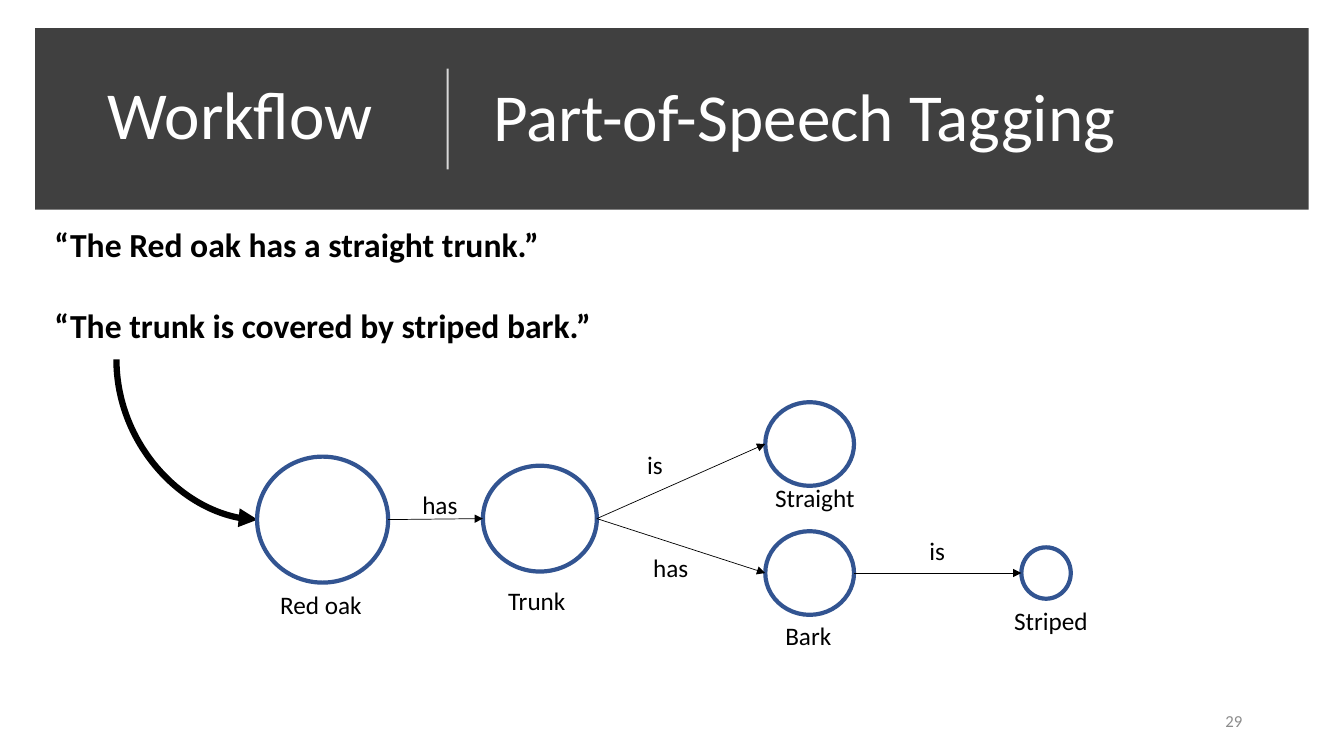
import pptx
import pptx.dml.color
import pptx.enum.shapes
import pptx.enum.text
import pptx.oxml
import pptx.oxml.ns
import pptx.util
from pptx.util import Inches

# Content
TITLE = "Part-of-Speech Tagging"
SECTION = "Workflow"
PAGE = "29"
SENTENCES = ["“The Red oak has a straight trunk.”",
             "“The trunk is covered by striped bark.”"]

# name: (circle left, top, width, height), (label left, top, width)
NODES = {
    "Red oak": ((2.55, 4.53, 1.3, 1.25), (2.68, 5.8, 1.02)),
    "Trunk": ((4.79, 4.62, 1.13, 1.05), (4.94, 5.76, 0.78)),
    "Straight": ((7.59, 3.99, 0.88, 0.83), (7.59, 4.74, 1)),
    "Bark": ((7.59, 5.27, 0.88, 0.83), (7.69, 6.11, 0.66)),
    "Striped": ((10.13, 5.43, 0.49, 0.51), (9.96, 5.96, 0.94)),
}
# from, to, relation, label left, label top
RELATIONS = [
    ("Red oak", "Trunk", "has", 4.09, 4.81),
    ("Trunk", "Straight", "is", 6.32, 4.41),
    ("Trunk", "Bark", "has", 6.38, 5.43),
    ("Bark", "Striped", "is", 9.12, 5.26),
]
COLORS = {"banner": "404040", "white": "FFFFFF", "black": "000000",
          "page": "8C8C8C", "circle": "325491"}
FONT = "Calibri"
LABEL_HEIGHT = 0.4
RELATION_WIDTH = 0.83

SHAPE = pptx.enum.shapes.MSO_SHAPE
CONNECTOR = pptx.enum.shapes.MSO_CONNECTOR
ALIGN = pptx.enum.text.PP_ALIGN
ANCHOR = pptx.enum.text.MSO_ANCHOR

deck = pptx.Presentation()
deck.slide_width, deck.slide_height = Inches(13.33), Inches(7.5)
slide = deck.slides.add_slide(deck.slide_layouts[5])


def rgb(name):
    return pptx.dml.color.RGBColor.from_string(COLORS[name])


def write(box, lines, size=18, color="black", bold=False, align=ALIGN.LEFT,
          anchor=ANCHOR.TOP, wrap=True, spacing=None, gap=0):
    frame = box.text_frame
    frame.word_wrap = wrap
    frame.auto_size = pptx.enum.text.MSO_AUTO_SIZE.NONE
    frame.vertical_anchor = anchor
    for index, line in enumerate(lines):
        paragraph = frame.add_paragraph() if index else frame.paragraphs[0]
        paragraph.text = line
        paragraph.alignment = align
        paragraph.line_spacing = spacing
        paragraph.space_before = pptx.util.Pt(gap if index else 0)
        font = paragraph.font
        font.name, font.size, font.bold = FONT, pptx.util.Pt(size), bold
        font.color.rgb = rgb(color)


def add_text(area, lines, **style):
    write(slide.shapes.add_textbox(*map(Inches, area)), lines, **style)


def add_shape(kind, area):
    shape = slide.shapes.add_shape(kind, *map(Inches, area))
    shape.shadow.inherit = False
    return shape


def add_line(kind, start, end, color, width, arrow=True):
    line = slide.shapes.add_connector(kind, *map(Inches, start + end))
    line.line.color.rgb = rgb(color)
    line.line.width = pptx.util.Pt(width)
    if arrow:
        tail = pptx.oxml.ns.qn("a:tailEnd")
        line.line._get_or_add_ln().makeelement(tail)
        head = pptx.oxml.parse_xml(
            f'<a:tailEnd {pptx.oxml.ns.nsdecls("a")} type="triangle"/>')
        line.line._get_or_add_ln().append(head)
    line._element.spPr.append(pptx.oxml.parse_xml(
        f'<a:effectLst {pptx.oxml.ns.nsdecls("a")}/>'))
    return line


# Banner with section name, divider and title
banner = add_shape(SHAPE.RECTANGLE, (0.35, 0.28, 12.63, 1.8))
banner.fill.solid()
banner.fill.fore_color.rgb = rgb("banner")
banner.line.fill.background()

heading = dict(size=48, color="white", anchor=ANCHOR.MIDDLE, spacing=0.9)
title = slide.shapes.title
title.left, title.top, title.width, title.height = map(
    Inches, (4.79, 0.5, 7.63, 1.38))
write(title, [TITLE], **heading)
# The title comes first in the tree, so lift it above the banner
banner._element.addnext(title._element)
add_text((0.97, 0.48, 3.4, 1.38), [SECTION], **heading)

divider = add_line(CONNECTOR.STRAIGHT, (4.44, 1.68), (4.44, 0.68), "white", 1.5,
                   arrow=False)
divider_color = next(divider._element.iter(pptx.oxml.ns.qn("a:srgbClr")))
divider_color.append(pptx.oxml.parse_xml(
    f'<a:alpha {pptx.oxml.ns.nsdecls("a")} val="80000"/>'))

# Example sentences, one empty line apart
add_text((0.44, 2.17, 5.85, 1.62), SENTENCES, size=24, bold=True, gap=29)

# Curved arrow from the sentences to the first node: a quarter bend, turned
bend = add_line(CONNECTOR.CURVE, (2.65, 3.66), (1.06, 5.06), "black", 4.5)
bend._element.spPr.find(pptx.oxml.ns.qn("a:xfrm")).set("rot", "16200000")
bend._element.spPr.find(pptx.oxml.ns.qn("a:prstGeom")).set(
    "prst", "curvedConnector2")

# Nodes
for name, (circle_area, (left, top, width)) in NODES.items():
    circle = add_shape(SHAPE.OVAL, circle_area)
    circle.fill.background()
    circle.line.color.rgb = rgb("circle")
    circle.line.width = pptx.util.Pt(3)
    add_text((left, top, width, LABEL_HEIGHT), [name], wrap=False)

# Relations run from the right of one circle to the left of the next
for source, target, relation, left, top in RELATIONS:
    x1, y1, w1, h1 = NODES[source][0]
    x2, y2, w2, h2 = NODES[target][0]
    add_line(CONNECTOR.STRAIGHT, (x1 + w1, y1 + h1 / 2), (x2, y2 + h2 / 2),
             "black", 0.5)
    add_text((left, top, RELATION_WIDTH, LABEL_HEIGHT), [relation])

# Page number
add_text((9.42, 6.95, 3, 0.4), [PAGE], size=12, color="page",
         align=ALIGN.RIGHT, anchor=ANCHOR.MIDDLE)

deck.save("out.pptx")
